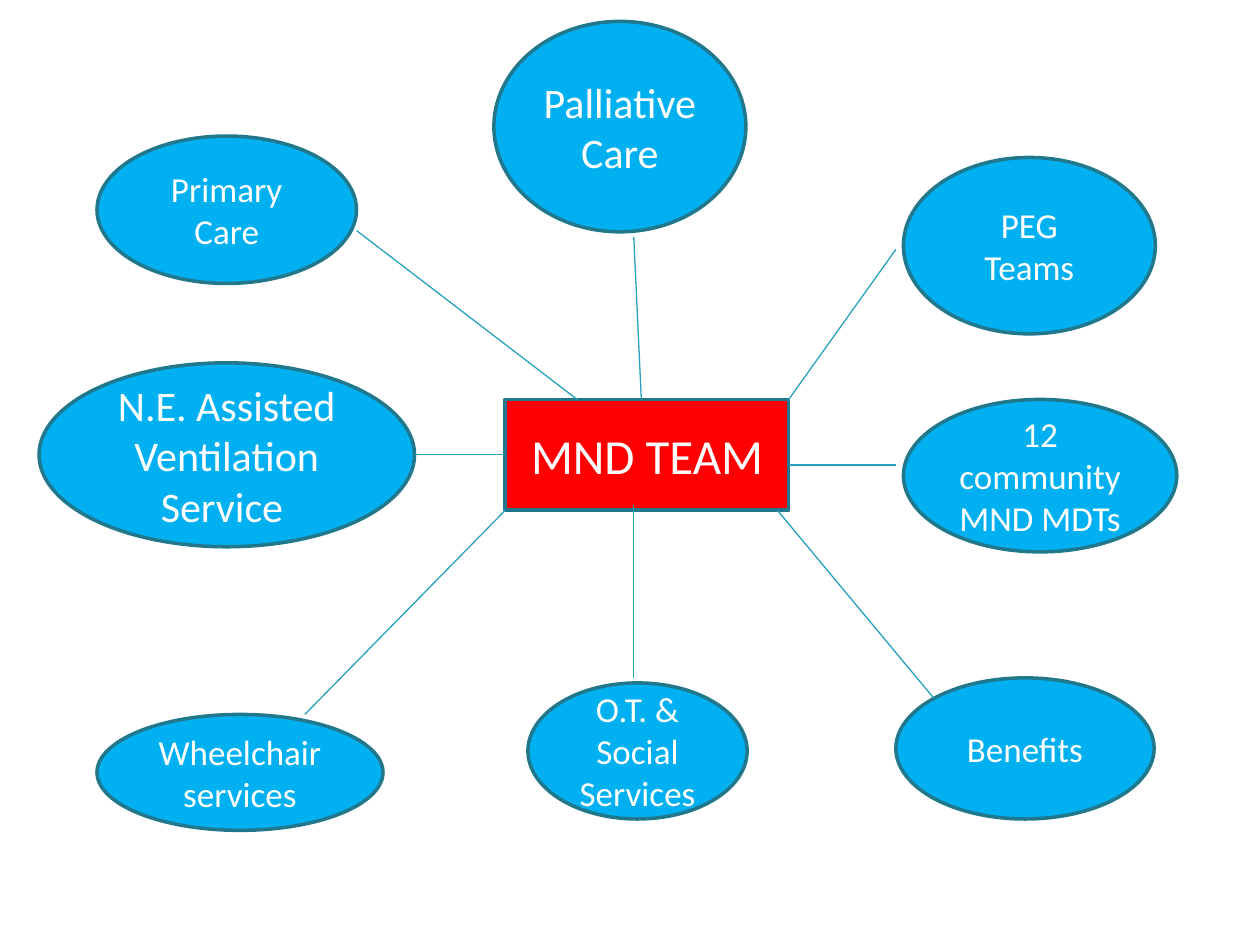
from lxml import etree
from pptx import Presentation
from pptx.dml.color import RGBColor
from pptx.enum import shapes, text
from pptx.oxml.ns import qn
from pptx.util import Inches, Pt

SKY = RGBColor(0x00, 0xB0, 0xF0)
RED = RGBColor(0xFF, 0x00, 0x00)
WHITE = RGBColor(0xFF, 0xFF, 0xFF)
OUTLINE = RGBColor(0x21, 0x78, 0x8D)
SPOKE = RGBColor(0x28, 0xA1, 0xBE)
OVAL = shapes.MSO_SHAPE.OVAL
RECTANGLE = shapes.MSO_SHAPE.RECTANGLE

presentation = Presentation()
presentation.slide_width = Inches(10)
presentation.slide_height = Inches(7.5)
slide = presentation.slides.add_slide(presentation.slide_layouts[6])


def add_node(kind, fill, label, size, box):
    shape = slide.shapes.add_shape(kind, *map(Inches, box))
    shape.shadow.inherit = False
    shape.fill.solid()
    shape.fill.fore_color.rgb = fill
    shape.line.color.rgb = OUTLINE
    shape.line.width = Pt(2)
    frame = shape.text_frame
    frame.word_wrap = True
    frame.vertical_anchor = text.MSO_ANCHOR.MIDDLE
    frame.text = label
    for paragraph in frame.paragraphs:
        paragraph.alignment = text.PP_ALIGN.CENTER
        for run in paragraph.runs:
            run.font.name = "Calibri"
            run.font.size = Pt(size)
            run.font.color.rgb = WHITE


# label, text size, (left, top, width, height)
services = [
    ("N.E. Assisted\nVentilation\nService ", 24, (0.31, 2.88, 2.98, 1.46)),
    ("Palliative Care", 24, (3.92, 0.17, 2, 1.67)),
    ("PEG Teams", 20, (7.17, 1.25, 2, 1.4)),
    ("Primary Care", 20, (0.77, 1.08, 2.06, 1.17)),
    ("12\ncommunity MND MDTs", 20, (7.17, 3.17, 2.17, 1.21)),
    ("O.T. & Social Services", 20, (4.19, 5.42, 1.74, 1.08)),
    ("Benefits", 20, (7.11, 5.38, 2.05, 1.12)),
    ("Wheelchair services", 20, (0.77, 5.67, 2.27, 0.92)),
]
add_node(RECTANGLE, RED, "MND TEAM", 28, (4.01, 3.17, 2.25, 0.88))
for label, size, box in services:
    add_node(OVAL, SKY, label, size, box)

# start x, start y, end x, end y
spokes = [
    (5.03, 1.88, 5.09, 3.17),
    (7.11, 1.98, 6.26, 3.17),
    (6.26, 3.69, 7.11, 3.69),
    (6.17, 4.05, 7.41, 5.54),
    (5.03, 4.01, 5.03, 5.38),
    (3.29, 3.61, 4.01, 3.61),
    (2.83, 1.83, 4.58, 3.17),
    (4.01, 4.05, 2.42, 5.67),
]
for ends in spokes:
    connector = slide.shapes.add_connector(
        shapes.MSO_CONNECTOR.STRAIGHT, *map(Inches, ends))
    connector.line.color.rgb = SPOKE
    connector.line.width = Pt(0.75)
    etree.SubElement(connector.element.spPr, qn("a:effectLst"))

presentation.save("out.pptx")
